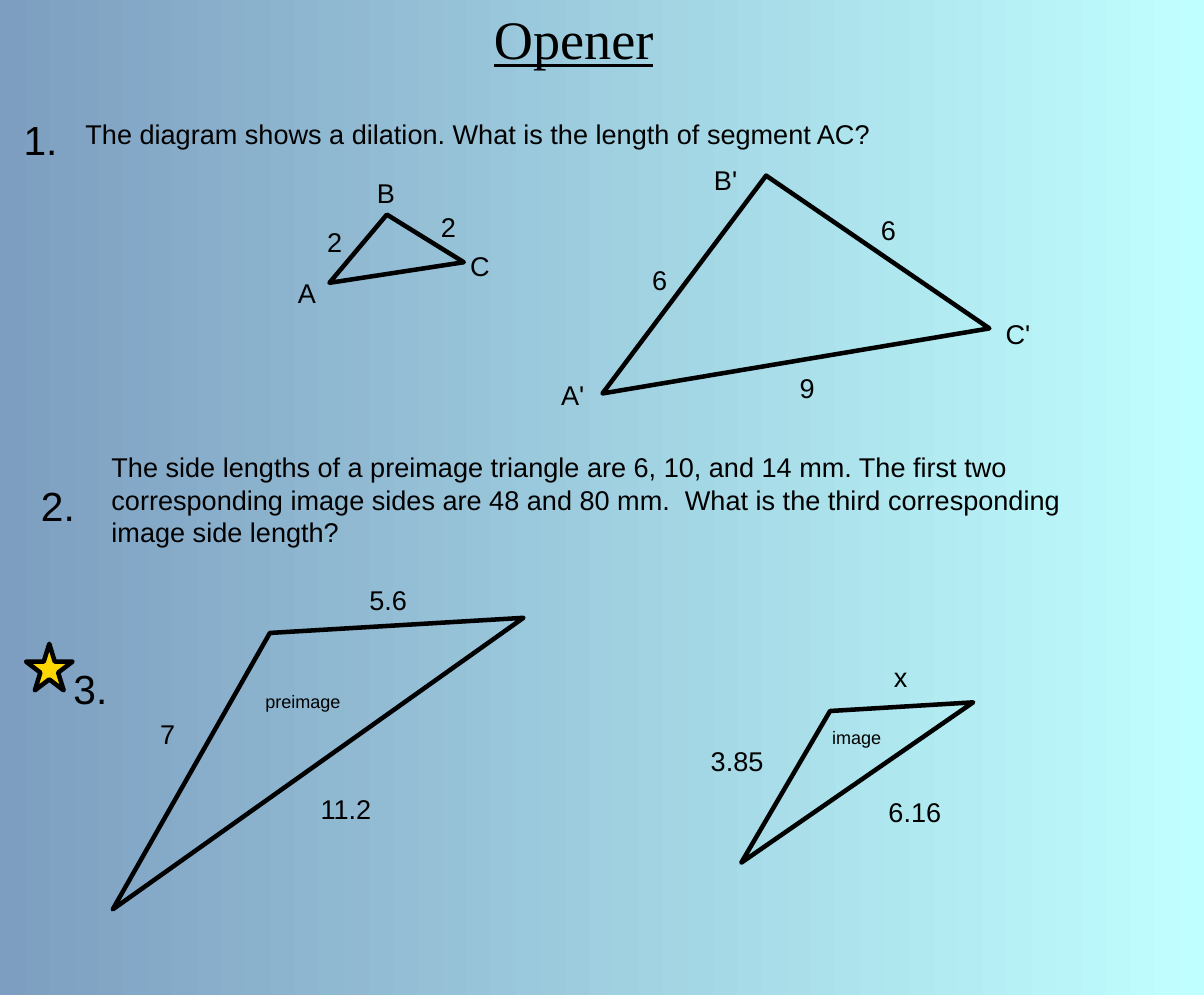
from pptx import Presentation, util as u
from pptx.dml.color import RGBColor
from pptx.enum import shapes, text

COLUMNS, ROWS = 111.1, 91.8  # a grid of tenths of an inch
INK, GOLD = "000000", "FFD700"
BACKDROP = ("7D9EC0", "C0FFFF")
BODY, NUMBER, NOTE = 18, 27, 12

# column, row, width in columns, wording
NUMBERS = [(1.2, 10.1, 5.6, "1."), (2.8, 43.9, 5.6, "2."), (5.8, 60.8, 5.6, "3.")]
DILATION_LABELS = [
    (26.5, 25, 3.7, "A"), (33.8, 15.8, 3.7, "B"), (42.4, 22.5, 3.9, "C"),
    (50.8, 34.4, 4.3, "A'"), (64.9, 14.6, 4.3, "B'"), (91.8, 28.8, 4.5, "C'"),
    (29.2, 20.3, 3.3, "2"), (39.7, 18.9, 3.3, "2"),
    (59.2, 23.8, 3.3, "6"), (80.3, 19.2, 3.3, "6"), (72.8, 33.8, 3.3, "9"),
]
SIDE_LABELS = [
    (13.8, 65.7, 3.3, "7"), (28.6, 72.6, 7.8, "11.2"), (33.1, 53.3, 6.2, "5.6"),
    (64.6, 68.2, 8.1, "3.85"), (81, 72.9, 8.1, "6.16"), (81.5, 60.4, 3.1, "x"),
]
TRIANGLE_NOTES = [(23.5, 63.2, 11.3, "preimage"), (75.8, 66.5, 7.9, "image")]
TRIANGLES = [
    [(42.8, 24.2), (30.4, 26.1), (35.7, 19.8)],
    [(91.3, 30.3), (55.6, 36.3), (70.7, 16.2)],
    [(48.3, 57), (10.4, 83.9), (24.9, 58.4)],
    [(89.8, 64.8), (68.4, 79.6), (76.6, 65.6)],
]


def grid(*cells):
    return [u.Inches(cell / 10) for cell in cells]


def rgb(hex_colour):
    return RGBColor.from_string(hex_colour)


def apply(target, formats):
    for name, value in formats.items():
        setattr(target, name, value)


def paint_background(slide):
    fill = slide.background.fill
    fill.gradient()
    fill.gradient_angle = 0
    for stop, colour in zip(fill.gradient_stops, BACKDROP):
        stop.color.rgb = rgb(colour)


def add_label(slide, column, row, width, wording, size=BODY, lines=1, **formats):
    height = lines * size / 6 + 1  # line spacing of 1.2 plus the insets
    frame = slide.shapes.add_textbox(*grid(column, row, width, height)).text_frame
    apply(frame, {"word_wrap": True, "auto_size": text.MSO_AUTO_SIZE.SHAPE_TO_FIT_TEXT})
    run = frame.paragraphs[0].add_run()
    run.text = wording
    apply(run.font, {"name": "Arial", "size": u.Pt(size), **formats})
    run.font.color.rgb = rgb(INK)


def outline(figure):
    figure.shadow.inherit = False
    figure.line.color.rgb = rgb(INK)
    figure.line.width = u.Pt(3)


def add_triangle(slide, corners):
    first, *others = [grid(*corner) for corner in corners]
    builder = slide.shapes.build_freeform(*first)
    builder.add_line_segments(others, close=True)
    triangle = builder.convert_to_shape()
    triangle.fill.background()
    outline(triangle)


def add_star(slide, column, row, side):
    star = slide.shapes.add_shape(
        shapes.MSO_SHAPE.STAR_5_POINT, *grid(column, row, side, side))
    star.fill.solid()
    star.fill.fore_color.rgb = rgb(GOLD)
    outline(star)


def main():
    deck = Presentation()
    deck.slide_width, deck.slide_height = grid(COLUMNS, ROWS)
    slide = deck.slides.add_slide(deck.slide_layouts[6])
    paint_background(slide)

    add_label(slide, 44.6, 0, 28.3, "Opener", 36, name="Times New Roman", underline=True)
    add_label(slide, 6.9, 10.3, 102.1,
              "The diagram shows a dilation. What is the length of segment AC?")
    add_label(slide, 9.3, 41.1, 96.2,
              "The side lengths of a preimage triangle are 6, 10, and 14 mm. "
              "The first two corresponding image sides are 48 and 80 mm.  "
              "What is the third corresponding image side length?", lines=3)
    add_star(slide, 2.4, 59.4, 4.3)
    for corners in TRIANGLES:
        add_triangle(slide, corners)
    for labels, size in ((NUMBERS, NUMBER), (DILATION_LABELS, BODY),
                         (SIDE_LABELS, BODY), (TRIANGLE_NOTES, NOTE)):
        for label in labels:
            add_label(slide, *label, size=size)

    deck.save("out.pptx")


if __name__ == "__main__":
    main()
